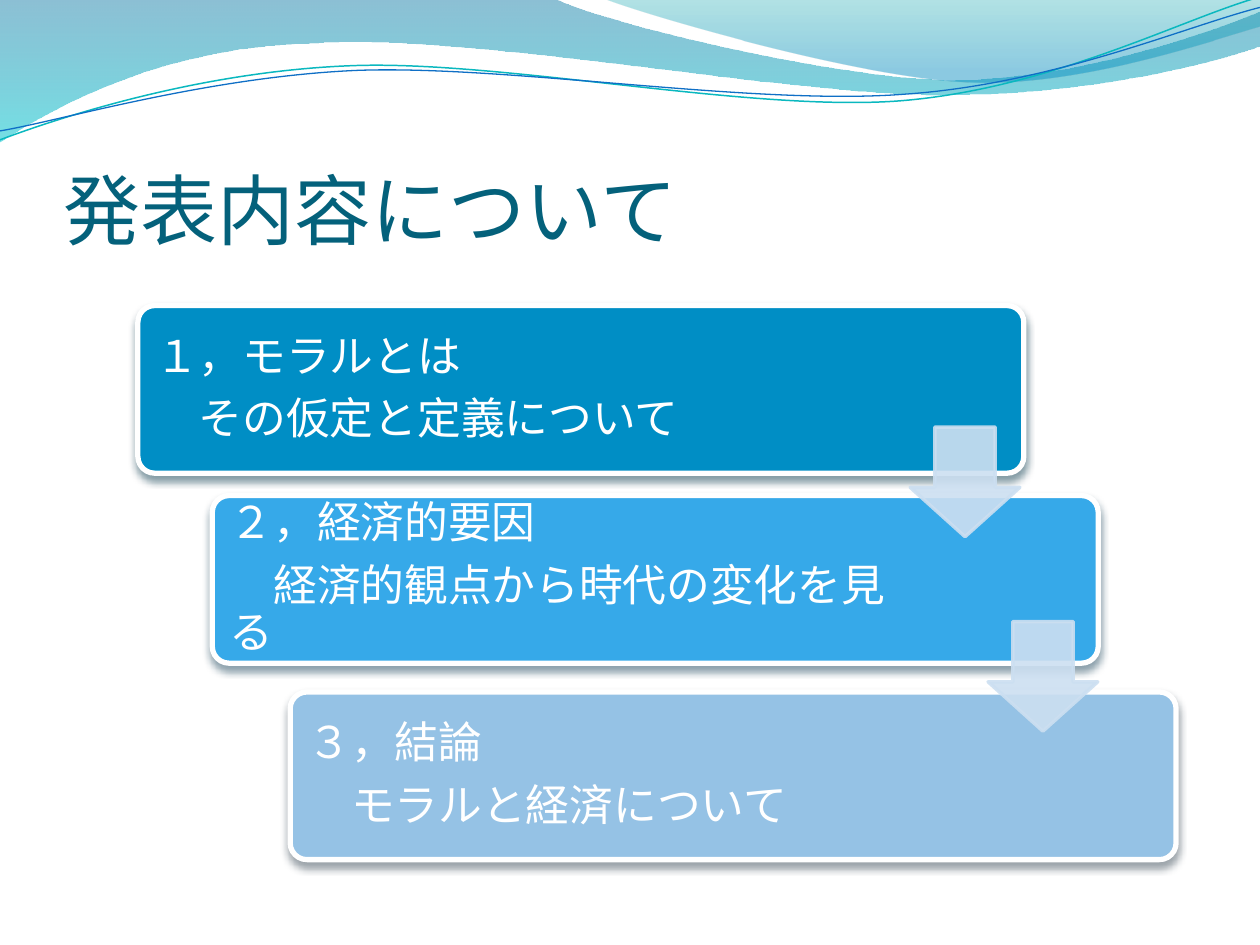
from dataclasses import dataclass

from lxml.etree import SubElement
from pptx import Presentation
from pptx.dml.color import RGBColor
from pptx.enum.shapes import MSO_SHAPE
from pptx.enum.text import MSO_ANCHOR
from pptx.oxml.ns import qn
from pptx.util import Cm, Pt

Point = tuple[float, float]
Segment = tuple[Point, ...]
BOX_WIDTH, BOX_HEIGHT = 17.86, 3.38
LABEL_OFFSET = 0.1
ARROW_SIZE = 2.21
ARROW_COLOUR = "CCDFF1"
STRAND_ROTATION = 357.3


@dataclass(frozen=True)
class Stop:
    position: float
    colour: str
    opacity: int


@dataclass(frozen=True)
class Wave:
    start: Point
    segments: tuple[Segment, ...]
    stops: tuple[Stop, Stop]


@dataclass(frozen=True)
class Strand:
    start: Point
    segments: tuple[Segment, ...]
    colour: str
    weight: float


@dataclass(frozen=True)
class Step:
    left: float
    top: float
    label_width: float
    colour: str
    shadow: str
    lines: tuple[str, str]


WAVES = (
    Wave((0, 0), (
        ((11.18, -0.03),),
        ((12.09, 0.43), (16.87, 1.6), (19.25, 1.6)),
        ((21.67, 1.6), (24.33, 0.66), (25.4, 0.23)),
        ((25.43, 0.91),),
        ((24.97, 1.12), (22.1, 1.93), (18.95, 1.91)),
        ((15.8, 1.91), (9.7, 0.71), (6.53, 0.86)),
        ((3.28, 0.91), (1.17, 2.11), (-0.03, 2.87)),
        ((0, 0),),
    ), (Stop(0, "0074A1", 45), Stop(1, "00C6CF", 55))),
    Wave((12.17, -0.03), (
        ((12.93, 0.28), (17.32, 1.57), (19.53, 1.65)),
        ((21.74, 1.75), (24.41, 0.81), (25.4, 0.53)),
        ((25.4, 0),),
        ((12.17, -0.03),),
    ), (Stop(0, "00A1A9", 30), Stop(0.8, "008BBF", 45))),
)
STRANDS = (
    Strand((-0.05, 2.22), (
        ((1.19, 1.82), (4.02, 1.04), (7.05, 1.06)),
        ((10.05, 1.07), (15.02, 2.37), (18.08, 2.29)),
        ((21.13, 2.2), (23.87, 0.91), (25.41, 0.55)),
    ), "0AB8BF", 0.85),
    Strand((-0.04, 2.04), (
        ((1.16, 1.9), (4.18, 1.15), (7.2, 1.16)),
        ((10.25, 1.19), (15.13, 2.25), (18.19, 2.16)),
        ((21.21, 2.1), (23.93, 1.06), (25.45, 0.75)),
    ), "0F6FC6", 0.75),
)
STEPS = (
    Step(2.78, 6.16, 14.2, "008EC5", "003245", ("１，モラルとは", "　その仮定と定義について")),
    Step(4.28, 9.99, 13.87, "36A9E9", "123C53",
         ("２，経済的要因", "　経済的観点から時代の変化を見る")),
    Step(5.85, 13.95, 13.87, "95C2E5", "344451", ("３，結論", "　モラルと経済について　")),
)
ARROWS = ((18.35, 8.61), (19.92, 12.53))


def rgb(colour: str) -> RGBColor:
    return RGBColor.from_string(colour)


def set_opacity(shape, *percentages: int) -> None:
    for colour, percentage in zip(shape.element.spPr.iter(qn("a:srgbClr")), percentages):
        SubElement(colour, qn("a:alpha"), val=str(percentage * 1000))


def add_outline(slide, start: Point, segments: tuple[Segment, ...], close: bool):
    builder = slide.shapes.build_freeform(Cm(start[0]), Cm(start[1]))
    builder.add_line_segments(
        [(Cm(x), Cm(y)) for segment in segments for x, y in segment], close=close)
    outline = builder.convert_to_shape()
    outline.shadow.inherit = False
    contour = next(outline.element.spPr.iter(qn("a:path")))
    vertices = iter(contour.findall(qn("a:lnTo")))
    for segment in segments:
        corners = [next(vertices) for _ in segment]
        if len(corners) == 3:
            curve = SubElement(contour, qn("a:cubicBezTo"))
            corners[0].addprevious(curve)
            for corner in corners:
                curve.append(corner[0])
                contour.remove(corner)
    return outline


def draw_wave(slide, wave: Wave) -> None:
    outline = add_outline(slide, wave.start, wave.segments, True)
    outline.fill.gradient()
    outline.fill.gradient_angle = 270
    for gradient_stop, stop in zip(outline.fill.gradient_stops, wave.stops):
        gradient_stop.position = stop.position
        gradient_stop.color.rgb = rgb(stop.colour)
    outline.line.fill.background()
    set_opacity(outline, *(stop.opacity for stop in wave.stops))


def draw_strand(slide, strand: Strand) -> None:
    outline = add_outline(slide, strand.start, strand.segments, False)
    outline.rotation = STRAND_ROTATION
    outline.fill.background()
    outline.line.color.rgb = rgb(strand.colour)
    outline.line.width = Pt(strand.weight)


def add_preset(slide, kind, left: float, top: float, width: float, height: float,
               fill: str, line: str, weight: float, adjustments: tuple[float, ...]):
    preset = slide.shapes.add_shape(kind, Cm(left), Cm(top), Cm(width), Cm(height))
    preset.shadow.inherit = False
    preset.fill.solid()
    preset.fill.fore_color.rgb = rgb(fill)
    preset.line.color.rgb = rgb(line)
    preset.line.width = Pt(weight)
    for index, value in enumerate(adjustments):
        preset.adjustments[index] = value
    return preset


def add_text(slide, lines: tuple[str, ...], *, left: float, top: float, width: float,
             height: float, size: float, font: str, colour: str, anchor: MSO_ANCHOR,
             insets: tuple[float, float, float, float],
             line_spacing: float = 1, space_after: float = 0) -> None:
    frame = slide.shapes.add_textbox(Cm(left), Cm(top), Cm(width), Cm(height)).text_frame
    frame.word_wrap = True
    frame.vertical_anchor = anchor
    (frame.margin_left, frame.margin_top,
     frame.margin_right, frame.margin_bottom) = map(Cm, insets)
    for index, line in enumerate(lines):
        paragraph = frame.add_paragraph() if index else frame.paragraphs[0]
        paragraph.line_spacing = line_spacing
        paragraph.space_after = Pt(space_after)
        run = paragraph.add_run()
        run.text = line
        run.font.size = Pt(size)
        run.font.name = font
        run.font.color.rgb = rgb(colour)


def draw_step(slide, step: Step) -> None:
    box = add_preset(slide, MSO_SHAPE.ROUNDED_RECTANGLE, step.left, step.top,
                     BOX_WIDTH, BOX_HEIGHT, step.colour, "FFFFFF", 3, (0.1,))
    shadow = SubElement(box.element.spPr.find(qn("a:effectLst")), qn("a:outerShdw"),
                        blurRad=str(Pt(4.5)), dist=str(Pt(3)), dir="5400000", rotWithShape="0")
    shadow_colour = SubElement(shadow, qn("a:srgbClr"), val=step.shadow)
    SubElement(shadow_colour, qn("a:alpha"), val="48000")
    add_text(slide, step.lines, left=step.left + LABEL_OFFSET, top=step.top + LABEL_OFFSET,
             width=step.label_width, height=BOX_HEIGHT - 2 * LABEL_OFFSET,
             size=25, font="Cambria", colour="FFFFFF", anchor=MSO_ANCHOR.MIDDLE,
             insets=(0.25, 0.25, 0.25, 0.25), line_spacing=0.9, space_after=8.75)


def draw_arrow(slide, left: float, top: float) -> None:
    arrow = add_preset(slide, MSO_SHAPE.DOWN_ARROW, left, top, ARROW_SIZE, ARROW_SIZE,
                       ARROW_COLOUR, ARROW_COLOUR, 2, (0.55, 0.45))
    set_opacity(arrow, 90, 90)


def main() -> None:
    deck = Presentation()
    deck.slide_width, deck.slide_height = Cm(25.4), Cm(19.05)
    slide = deck.slides.add_slide(deck.slide_layouts[6])
    for wave in WAVES:
        draw_wave(slide, wave)
    for strand in STRANDS:
        draw_strand(slide, strand)
    for step in STEPS:
        draw_step(slide, step)
    for left, top in ARROWS:
        draw_arrow(slide, left, top)
    add_text(slide, ("発表内容について",), left=1.28, top=1.96, width=23.06, height=3.18,
             size=44, font="Calibri", colour="04617B", anchor=MSO_ANCHOR.BOTTOM,
             insets=(0, 0.13, 0, 0))
    deck.save("out.pptx")


if __name__ == "__main__":
    main()
